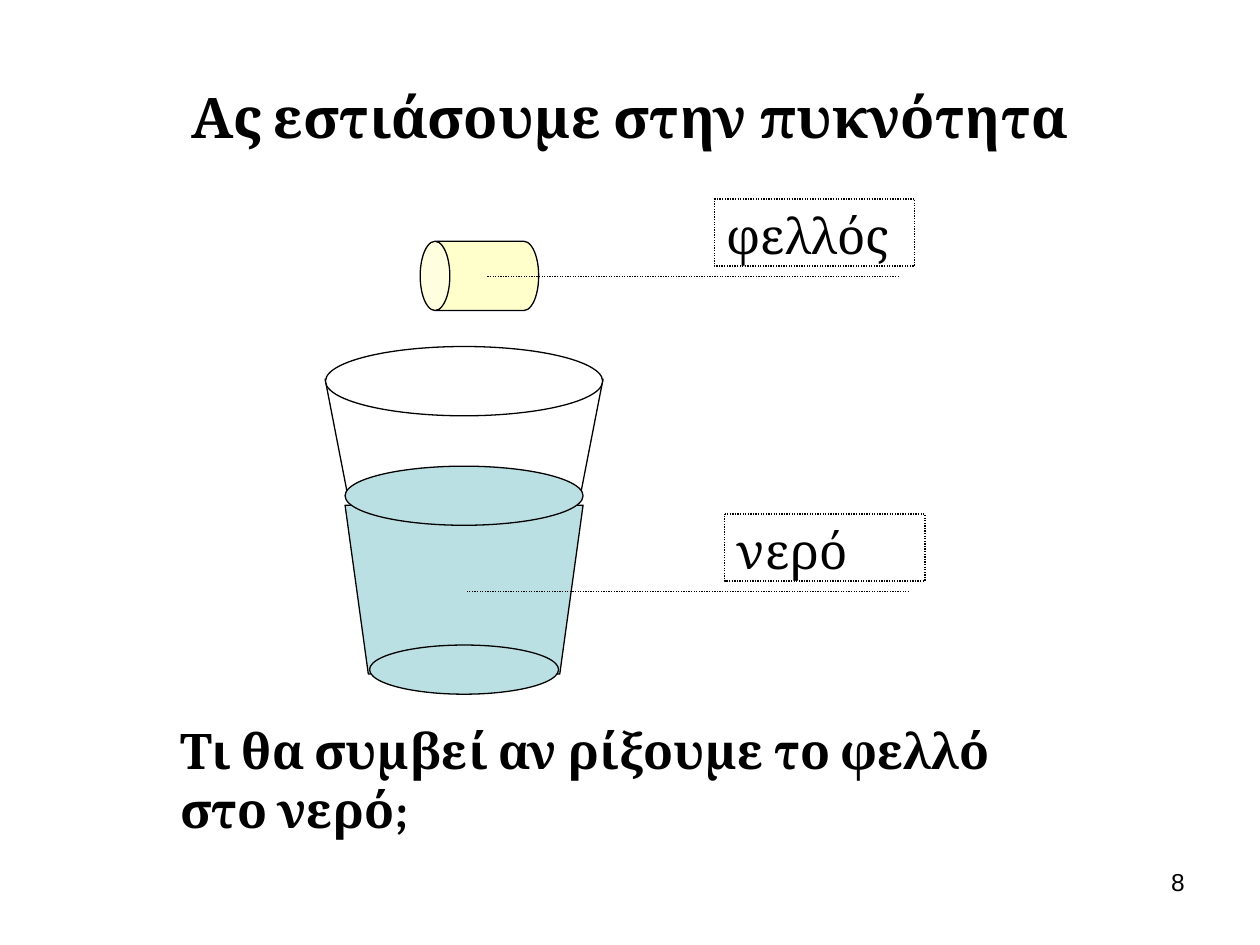
from pptx import Presentation
from pptx.dml.color import RGBColor
from pptx.enum import dml, shapes, text
from pptx.util import Pt

INK = {"black": "000000", "white": "FFFFFF", "water": "BBE0E3", "cork": "FFFFCC"}
FONT = "Cambria"

TITLE = "Ας εστιάσουμε στην πυκνότητα"
ASK = "Τι θα συμβεί αν ρίξουμε το φελλό στο νερό;"
PAGE = "8"

# Glass parts, back to front, all centred on one axis
AXIS = 265.2
# kind, top, height, half width at top, half width at bottom, fill
GLASS = [
    ("wall", 216.7, 67.7, 79.4, 66.2, None),
    ("oval", 198, 39.6, 79.2, 79.2, "white"),
    ("wall", 288.7, 96.5, 68, 54.7, "water"),
    ("oval", 368.6, 28.1, 54, 54, "water"),
    ("oval", 266.4, 33.8, 68, 68, "water"),
]
CORK = (254.2, 123.8, 39.6, 67.7)
# word, left, top, reach of the leader line
WATER = ("νερό", 414, 293.8, -1.29)
FLOAT = ("φελλός", 408.2, 113.8, -1.135)
TAG = (114.5, 38.2)


def color(name):
    return RGBColor.from_string(INK[name])


def paint(shape, fill=None, dash=None):
    shape.shadow.inherit = False
    if fill:
        shape.fill.solid()
        shape.fill.fore_color.rgb = color(fill)
    else:
        shape.fill.background()
    shape.line.color.rgb = color("black")
    shape.line.width = Pt(0.75)
    if dash:
        shape.line.dash_style = dash


def write(shape, words, size=28, font=FONT, bold=False,
          align=text.PP_ALIGN.LEFT, anchor=text.MSO_ANCHOR.TOP):
    frame = shape.text_frame
    frame.word_wrap = True
    frame.vertical_anchor = anchor
    par = frame.paragraphs[0]
    par.alignment = align
    run = par.add_run()
    run.text = words
    run.font.size, run.font.name, run.font.bold = Pt(size), font, bold
    run.font.color.rgb = color("black")


def place(*box):
    return [Pt(n) for n in box]


def draw(group, kind, top, high, upper, lower, fill):
    if kind == "oval":
        part = group.shapes.add_shape(
            shapes.MSO_SHAPE.OVAL, *place(AXIS - upper, top, 2 * upper, high))
    else:
        base = top + high
        pen = group.shapes.build_freeform(Pt(AXIS - upper), Pt(top))
        pen.add_line_segments([place(AXIS - lower, base), place(AXIS + lower, base),
                               place(AXIS + upper, top)], close=True)
        part = pen.convert_to_shape()
    paint(part, fill)


def label(slide, word, left, top, reach):
    tag = slide.shapes.add_shape(shapes.MSO_SHAPE.LINE_CALLOUT_1,
                                 *place(left, top, *TAG))
    for i, n in enumerate((1.157, 0.921, 1.157, reach)):
        tag.adjustments[i] = n
    paint(tag, "white", dml.MSO_LINE.ROUND_DOT)
    write(tag, word)


def main():
    deck = Presentation()
    deck.slide_width, deck.slide_height = Pt(720), Pt(540)
    slide = deck.slides.add_slide(deck.slide_layouts[5])

    # Title
    head = slide.shapes.title
    head.left, head.top, head.width, head.height = place(24, 21.6, 672, 90)
    write(head, TITLE, size=32, bold=True, align=text.PP_ALIGN.CENTER,
          anchor=text.MSO_ANCHOR.MIDDLE)

    # Glass of water
    group = slide.shapes.add_group_shape()
    for part in GLASS:
        draw(group, *part)
    label(slide, *WATER)

    # Cork, lying on its side
    cork = slide.shapes.add_shape(shapes.MSO_SHAPE.CAN, *place(*CORK))
    cork.adjustments[0] = 0.428
    cork.rotation = 270
    paint(cork, "cork")
    label(slide, *FLOAT)

    # Question and page number
    write(slide.shapes.add_textbox(*place(95.8, 408.2, 527, 74.9)), ASK, bold=True)
    write(slide.shapes.add_textbox(*place(516, 491.8, 168, 37.4)), PAGE,
          size=14, font="Arial", align=text.PP_ALIGN.RIGHT)

    deck.save("out.pptx")


if __name__ == "__main__":
    main()
